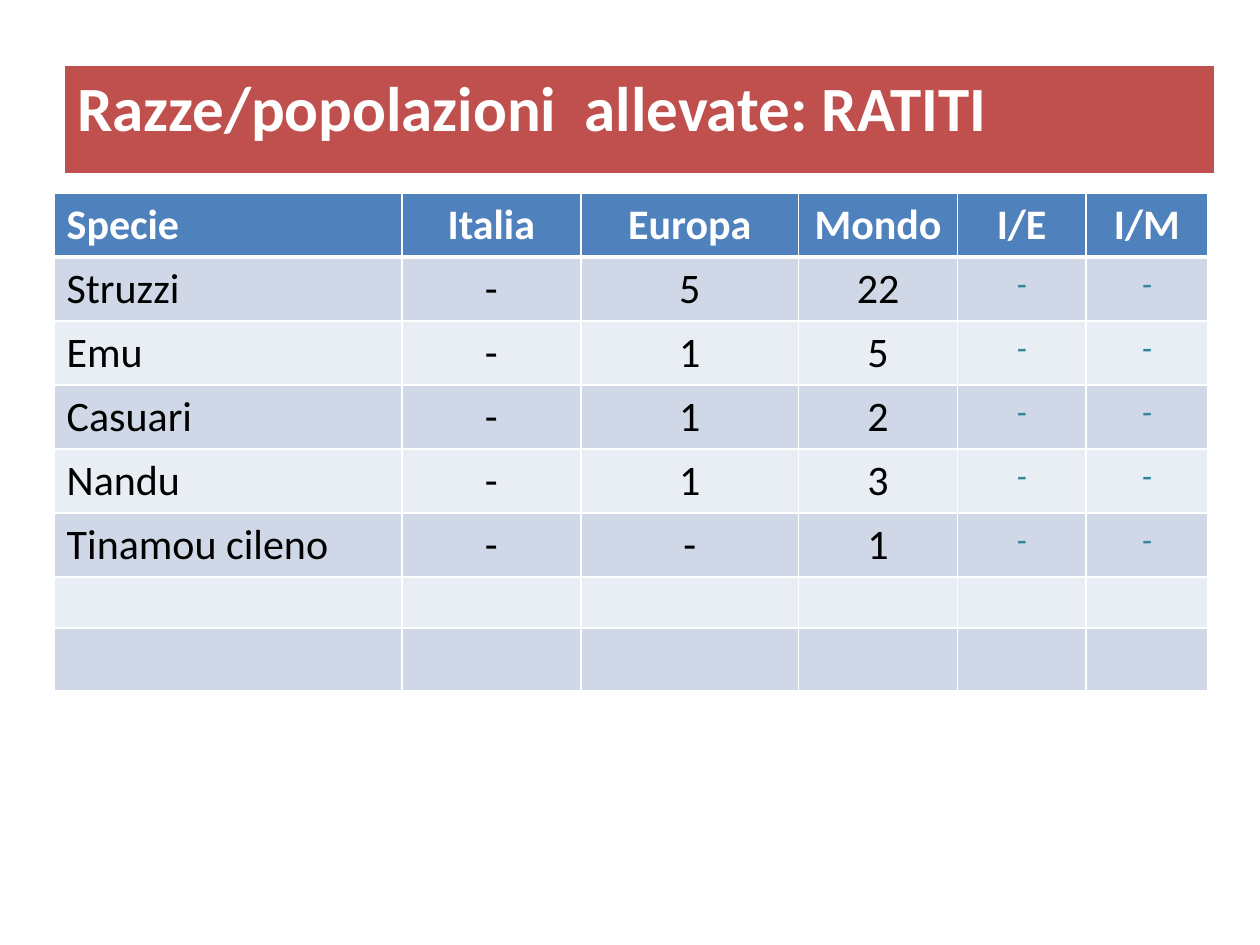
from dataclasses import dataclass

from lxml.etree import SubElement
from pptx import Presentation
from pptx.dml.color import RGBColor
from pptx.enum.text import PP_ALIGN
from pptx.oxml.ns import qn
from pptx.util import Cm, Pt


@dataclass(frozen=True)
class Theme:
    font: str = "Calibri"
    white: str = "FFFFFF"
    black: str = "000000"
    title_fill: str = "C0504D"
    header_fill: str = "4F81BD"
    bands: tuple = ("D0D8E8", "E9EDF4")
    ratio: str = "31859C"
    title_size: int = 36
    text_size: int = 24
    ratio_size: int = 20
    thin: int = 1
    thick: int = 3


THEME = Theme()
TITLE_STYLE = dict(size=Pt(THEME.title_size), bold=True, italic=False, color=THEME.white)
HEADER_STYLE = dict(TITLE_STYLE, size=Pt(THEME.text_size))
BODY_STYLE = dict(HEADER_STYLE, bold=False, color=THEME.black)
RATIO_STYLE = dict(BODY_STYLE, size=Pt(THEME.ratio_size), italic=True, color=THEME.ratio)

TITLE = "Razze/popolazioni  allevate: RATITI"
HEADER = ("Specie", "Italia", "Europa", "Mondo", "I/E", "I/M")
SPECIES = (
    ("Struzzi", "-", "5", "22", "-", "-"),
    ("Emu", "-", "1", "5", "-", "-"),
    ("Casuari", "-", "1", "2", "-", "-"),
    ("Nandu", "-", "1", "3", "-", "-"),
    ("Tinamou cileno", "-", "-", "1", "-", "-"),
)
EMPTY_ROWS = (("",) * len(HEADER),) * 2
COLUMN_WIDTHS = (7.01, 3.61, 4.39, 3.2, 2.59, 2.46)
ROW_HEIGHTS = (1.29,) * (1 + len(SPECIES)) + (1.03, 1.27)
FIRST_RATIO_COLUMN = HEADER.index("I/E")


def add_grid(slide, left, top, widths, heights):
    table = slide.shapes.add_table(
        len(heights), len(widths), Cm(left), Cm(top), Cm(sum(widths)), Cm(sum(heights))
    ).table
    table.first_row = table.horz_banding = False
    for column, width in zip(table.columns, widths):
        column.width = Cm(width)
    for row, height in zip(table.rows, heights):
        row.height = Cm(height)
    return table


def set_borders(cell, top, bottom):
    tc_pr = cell._tc.get_or_add_tcPr()
    widths = {"lnL": THEME.thin, "lnR": THEME.thin, "lnT": top, "lnB": bottom}
    for tag, width in widths.items():
        ln = SubElement(tc_pr, qn(f"a:{tag}"), w=str(Pt(width)))
        fill = SubElement(ln, qn("a:solidFill"))
        SubElement(fill, qn("a:srgbClr"), val=THEME.white)


def fill_cell(cell, text, fill, style, align=PP_ALIGN.LEFT, top=THEME.thin, bottom=THEME.thin):
    set_borders(cell, top, bottom)
    cell.fill.solid()
    cell.fill.fore_color.rgb = RGBColor.from_string(fill)
    if not text:
        return
    p = cell.text_frame.paragraphs[0]
    p.alignment = align
    r = p.add_run()
    r.text = text
    r.font.name = THEME.font
    for name, value in style.items():
        if name == "color":
            r.font.color.rgb = RGBColor.from_string(value)
        else:
            setattr(r.font, name, value)


def add_title(slide):
    table = add_grid(slide, 1.3, 1.32, (23.19,), (2.21,))
    fill_cell(table.cell(0, 0), TITLE, THEME.title_fill, TITLE_STYLE, bottom=THEME.thick)


def cell_style(row, column):
    if row == 0:
        return HEADER_STYLE
    return RATIO_STYLE if column >= FIRST_RATIO_COLUMN else BODY_STYLE


def add_species_table(slide):
    table = add_grid(slide, 1.09, 3.89, COLUMN_WIDTHS, ROW_HEIGHTS)
    for i, row in enumerate((HEADER, *SPECIES, *EMPTY_ROWS)):
        fill = THEME.bands[(i - 1) % 2] if i else THEME.header_fill
        top = THEME.thick if i == 1 else THEME.thin
        bottom = THEME.thick if i == 0 else THEME.thin
        for j, text in enumerate(row):
            align = PP_ALIGN.CENTER if j else PP_ALIGN.LEFT
            fill_cell(table.cell(i, j), text, fill, cell_style(i, j), align, top, bottom)


def main():
    prs = Presentation()
    prs.slide_width, prs.slide_height = Cm(25.4), Cm(19.05)
    slide = prs.slides.add_slide(prs.slide_layouts[6])
    add_species_table(slide)
    add_title(slide)
    prs.save("out.pptx")


if __name__ == "__main__":
    main()
